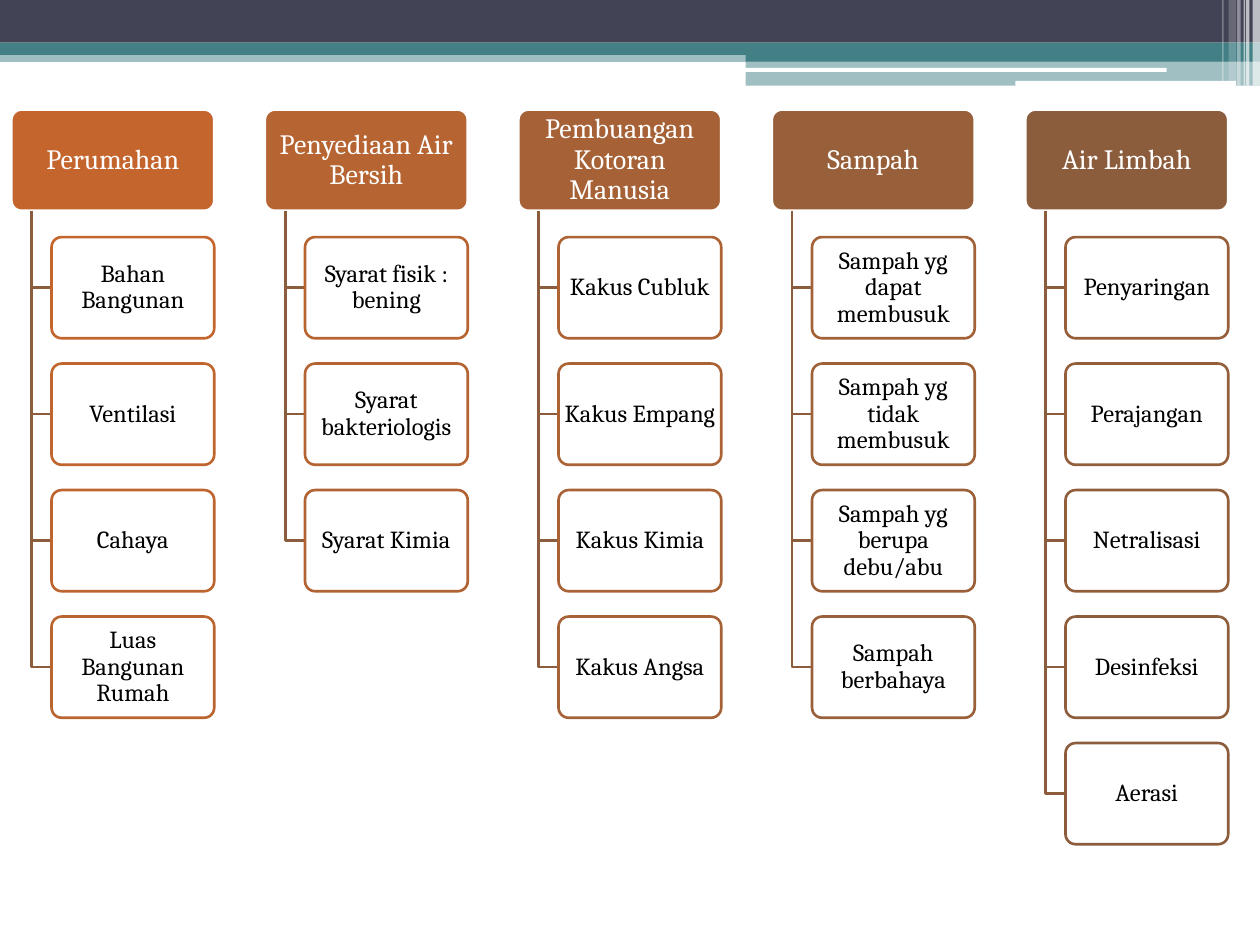
import colorsys

import pptx
import pptx.dml.color
import pptx.enum.shapes
import pptx.enum.text
import pptx.oxml
import pptx.oxml.ns
import pptx.util

Cm = pptx.util.Cm
SHAPE = pptx.enum.shapes.MSO_SHAPE
WHITE, BLACK, NAVY, TEAL = "FFFFFF", "000000", "424456", "438086"
ORANGE, BROWN = "C4652D", "8B5D3D"


def color(hex_text):
    return pptx.dml.color.RGBColor.from_string(hex_text)


def blend(start, end, share):
    """Mix two colours in HLS space."""
    first, last = (colorsys.rgb_to_hls(*(part / 255 for part in color(value)))
                   for value in (start, end))
    mixed = colorsys.hls_to_rgb(*(a + (b - a) * share for a, b in zip(first, last)))
    return "".join(f"{round(part * 255):02X}" for part in mixed)


class Diagram:
    """Holds the style and the current slide."""
    font = "Cambria"
    line_width = pptx.util.Pt(1.5)

    def __init__(self, slide):
        self.slide = slide

    def block(self, kind, left, top, width, height, fill, opacity=100):
        shape = self.slide.shapes.add_shape(
            kind, Cm(left), Cm(top), Cm(width), Cm(height))
        shape.shadow.inherit = False
        shape.fill.solid()
        shape.fill.fore_color.rgb = color(fill)
        if opacity < 100:
            srgb = shape.fill._xPr.find(".//" + pptx.oxml.ns.qn("a:srgbClr"))
            alpha = pptx.oxml.parse_xml(
                f'<a:alpha {pptx.oxml.ns.nsdecls("a")} val="{opacity * 1000}"/>')
            srgb.append(alpha)
        shape.line.fill.background()
        return shape

    def outline(self, shape, line):
        shape.line.color.rgb = color(line)
        shape.line.width = self.line_width

    def card(self, text, left, top, width, height, fill, line, ink, size, opacity=100):
        card = self.block(SHAPE.ROUNDED_RECTANGLE, left, top, width, height, fill, opacity)
        card.adjustments[0] = 0.1
        self.outline(card, line)
        frame = card.text_frame
        frame.word_wrap = True
        frame.vertical_anchor = pptx.enum.text.MSO_ANCHOR.MIDDLE
        frame.margin_left = frame.margin_right = Cm(0.02)
        frame.margin_top = frame.margin_bottom = 0
        frame.text = text
        paragraph = frame.paragraphs[0]
        paragraph.alignment = pptx.enum.text.PP_ALIGN.CENTER
        paragraph.line_spacing = 0.9
        font = paragraph.runs[0].font
        font.name, font.size = self.font, pptx.util.Pt(size)
        font.color.rgb = color(ink)

    def elbow(self, left, top, right, bottom):
        builder = self.slide.shapes.build_freeform(Cm(left), Cm(top))
        builder.add_line_segments(
            [(Cm(left), Cm(bottom)), (Cm(right), Cm(bottom))], close=False)
        branch = builder.convert_to_shape()
        branch.shadow.inherit = False
        branch.fill.background()
        self.outline(branch, BROWN)


TOPICS = [
    ("Perumahan", ["Bahan Bangunan", "Ventilasi", "Cahaya", "Luas Bangunan Rumah"]),
    ("Penyediaan Air Bersih",
     ["Syarat fisik : bening", "Syarat bakteriologis", "Syarat Kimia"]),
    ("Pembuangan Kotoran Manusia",
     ["Kakus Cubluk", "Kakus Empang", "Kakus Kimia", "Kakus Angsa"]),
    ("Sampah", ["Sampah yg dapat membusuk", "Sampah yg tidak membusuk",
                "Sampah yg berupa debu/abu", "Sampah berbahaya"]),
    ("Air Limbah",
     ["Penyaringan", "Perajangan", "Netralisasi", "Desinfeksi", "Aerasi"]),
]

# Top band: left, top, width, height, colour, opacity
BANDS = [
    (0, 1.02, 25.4, 0.23, TEAL, 50),
    (0, 0, 25.4, 0.86, NAVY, 100),
    (0, 0.86, 25.4, 0.25, TEAL, 100),
    (15.03, 0.99, 10.37, 0.25, TEAL, 100),
    (15.03, 1.23, 10.37, 0.5, TEAL, 50),
]
HIGHLIGHTS = [(15.02, 1.37, 8.5, 0.08), (20.47, 1.63, 4.45, 0.1)]
# Stripes at the right edge: left, width, height, opacity
STRIPES = [
    (25.25, 0.15, 1.73, 65), (25.12, 0.07, 1.73, 65), (25.07, 0.03, 1.73, 60),
    (24.94, 0.07, 1.73, 40), (24.77, 0.15, 1.63, 20), (24.64, 0.03, 1.63, 30),
]

# Diagram grid in centimetres
LEFT, HEAD_TOP, ITEM_TOP = 0.23, 2.21, 4.78
COLUMN_STEP, ROW_STEP = 5.11, 2.55
HEAD_WIDTH, ITEM_WIDTH, CARD_HEIGHT = 4.09, 3.28, 2.04
TRUNK_INDENT, ITEM_INDENT = 0.41, 0.81


def main():
    deck = pptx.Presentation()
    deck.slide_width, deck.slide_height = Cm(25.4), Cm(19.05)
    diagram = Diagram(deck.slides.add_slide(deck.slide_layouts[6]))

    # Decoration along the top
    for left, top, width, height, fill, opacity in BANDS:
        diagram.block(SHAPE.RECTANGLE, left, top, width, height, fill, opacity)
    for box in HIGHLIGHTS:
        diagram.block(SHAPE.ROUNDED_RECTANGLE, *box, WHITE)
    for left, width, height, opacity in STRIPES:
        diagram.block(SHAPE.RECTANGLE, left, 0, width, height, WHITE, opacity)

    # Topics with their items, shading from orange to brown
    last_item = sum(len(items) for _, items in TOPICS) - 1
    item_number = 0
    for column, (topic, items) in enumerate(TOPICS):
        left = LEFT + column * COLUMN_STEP
        topic_fill = blend(ORANGE, BROWN, column / (len(TOPICS) - 1))
        diagram.card(topic, left, HEAD_TOP, HEAD_WIDTH, CARD_HEIGHT,
                     topic_fill, WHITE, WHITE, 16)
        for row, item in enumerate(items):
            top = ITEM_TOP + row * ROW_STEP
            item_left = left + ITEM_INDENT
            diagram.elbow(left + TRUNK_INDENT, HEAD_TOP + CARD_HEIGHT,
                          item_left, top + CARD_HEIGHT / 2)
            diagram.card(item, item_left, top, ITEM_WIDTH, CARD_HEIGHT, WHITE,
                         blend(ORANGE, BROWN, item_number / last_item), BLACK, 14, 90)
            item_number += 1

    deck.save("out.pptx")


if __name__ == "__main__":
    main()
